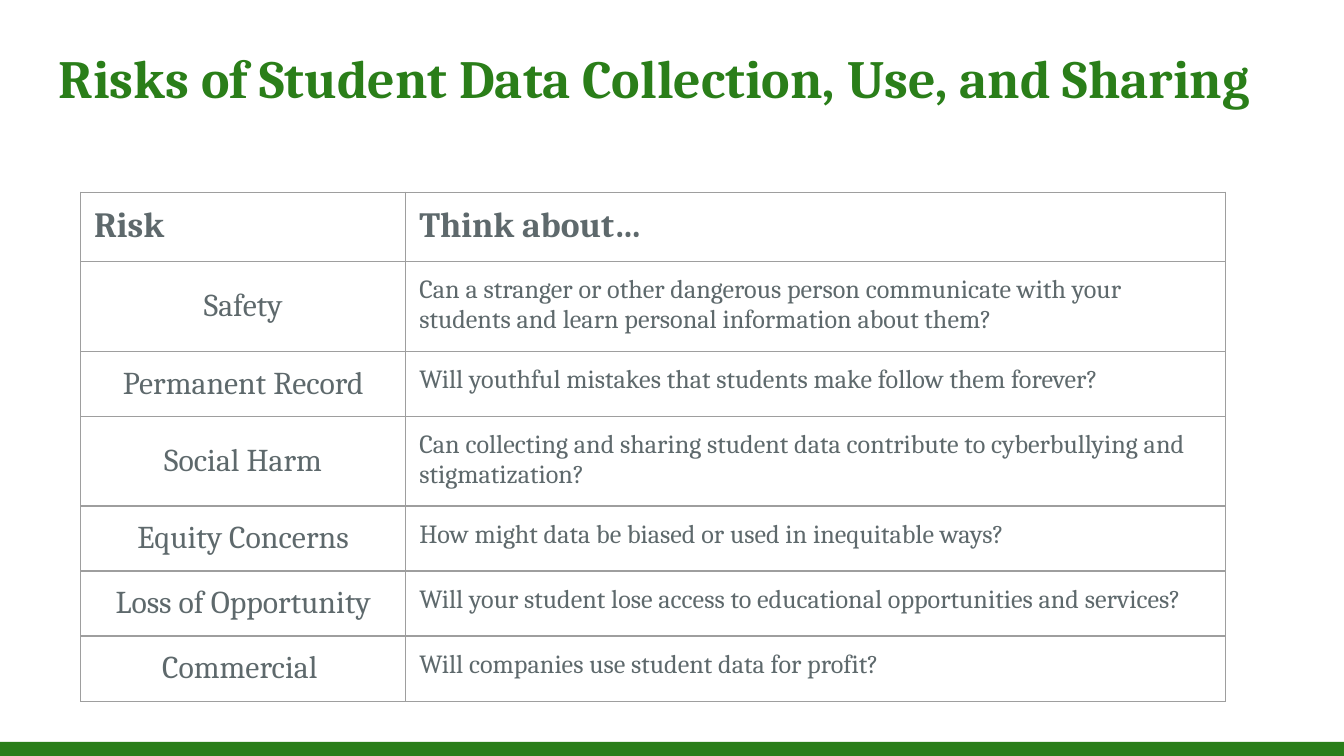
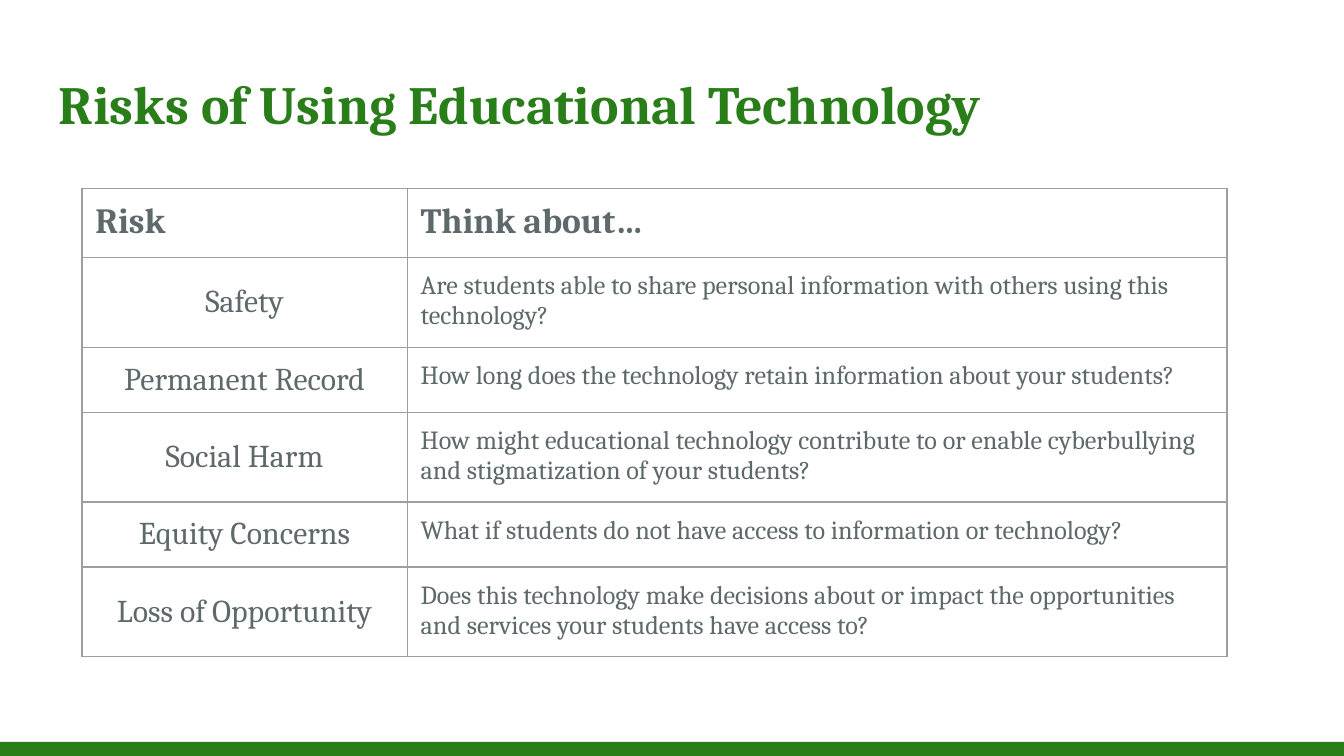
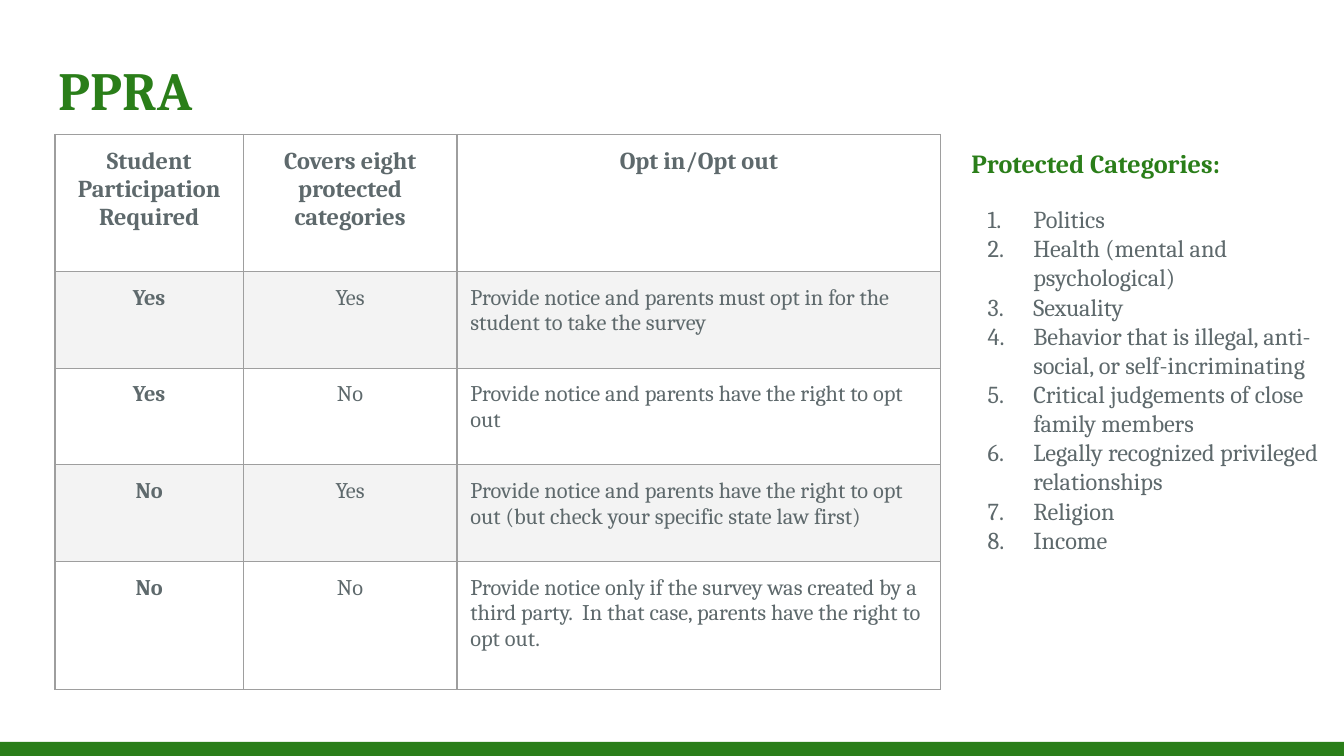
from dataclasses import dataclass

from lxml.etree import SubElement as Sub
from pptx import Presentation
from pptx.dml.color import RGBColor as Rgb
from pptx.enum.shapes import MSO_SHAPE as Shape
from pptx.enum.text import MSO_ANCHOR as Anchor, PP_ALIGN as Align
from pptx.oxml.ns import qn
from pptx.util import Inches, Pt


@dataclass(frozen=True)
class Theme:
    font: str = "Cambria"
    green: str = "2A7E19"
    gray: str = "5E696C"
    band: str = "F3F3F3"
    rule: str = "9E9E9E"
    title: float = 28.8
    head: float = 19
    name: float = 17
    body: float = 14
    list: float = 13
    small: float = 12
    pad: float = 0.1
    edge: float = 0.75


class Deck:
    def __init__(self, theme):
        self.theme = theme
        self.prs = Presentation()
        self.prs.slide_width = Inches(10)
        self.prs.slide_height = Inches(10) * 9 // 16
        self.slide = None

    def page(self, title, top):
        self.slide = self.prs.slides.add_slide(self.prs.slide_layouts[6])
        bar = self.slide.shapes.add_shape(
            Shape.RECTANGLE, Inches(0), Inches(5.52), Inches(10), Inches(0.11))
        bar.shadow.inherit = False
        bar.fill.solid()
        bar.fill.fore_color.rgb = Rgb.from_string(self.theme.green)
        bar.line.fill.background()
        self.text([title], (0.34, top, 9.32, 0.68), self.theme.title,
                  self.theme.green, True)

    def style(self, para, size, color, bold=False, align=Align.LEFT):
        para.alignment = align
        font = para.font
        font.name, font.size, font.bold = self.theme.font, Pt(size), bold
        font.color.rgb = Rgb.from_string(color)

    def inset(self, item):
        item.margin_left = item.margin_right = Inches(self.theme.pad)
        item.margin_top = item.margin_bottom = Inches(self.theme.pad)

    def text(self, lines, box, size, color, bold=False):
        frame = self.slide.shapes.add_textbox(*map(Inches, box)).text_frame
        frame.word_wrap = True
        self.inset(frame)
        frame.text = "\n".join(lines)
        for para in frame.paragraphs:
            self.style(para, size, color, bold)
        return frame

    def steps(self, lines, box):
        frame = self.text(lines, box, self.theme.list, self.theme.gray)
        for para in frame.paragraphs:
            props = para._p.get_or_add_pPr()
            props.set("marL", str(Inches(0.5)))
            props.set("indent", str(Inches(-0.34)))
            Sub(props, qn("a:buAutoNum"), type="arabicPeriod")

    def table(self, box, cols, rows, data):
        frame = self.slide.shapes.add_table(
            len(rows), len(cols), *map(Inches, box))
        grid = frame.table
        grid.first_row = grid.horz_banding = False
        for col, width in zip(grid.columns, cols):
            col.width = Inches(width)
        for row, height, texts in zip(grid.rows, rows, data):
            row.height = Inches(height)
            for cell, text in zip(row.cells, texts):
                cell.text = text
                self.inset(cell)
                self.edges(cell)
                cell.fill.background()
        frame.height = Inches(box[3])
        return grid

    def edges(self, cell):
        props = cell._tc.get_or_add_tcPr()
        for side in ("lnL", "lnR", "lnT", "lnB"):
            line = Sub(props, qn(f"a:{side}"), w=str(Pt(self.theme.edge)))
            fill = Sub(line, qn("a:solidFill"))
            Sub(fill, qn("a:srgbClr"), val=self.theme.rule)

    def risks(self, box, data):
        look = self.theme
        data = [("Risk", "Think about…"), *data]
        grid = self.table(box, (2.42, 6.1), [0.42] * len(data), data)
        for i, row in enumerate(grid.rows):
            name, ask = row.cells
            if i == 0:
                for cell in (name, ask):
                    self.style(cell.text_frame.paragraphs[0], look.head, look.gray, True)
                continue
            name.vertical_anchor = Anchor.MIDDLE
            self.style(name.text_frame.paragraphs[0], look.name, look.gray,
                       align=Align.CENTER)
            self.style(ask.text_frame.paragraphs[0], look.body, look.gray)

    def rights(self, box, data):
        look = self.theme
        grid = self.table(box, (1.4, 1.59, 3.6),
                          (1.02, 0.72, 0.72, 0.72, 0.95), data)
        for i, row in enumerate(grid.rows):
            for j, cell in enumerate(row.cells):
                head = i == 0
                self.style(cell.text_frame.paragraphs[0],
                           look.list if head else look.small, look.gray,
                           head or j == 0,
                           Align.CENTER if head or j < 2 else Align.LEFT)
                if i % 2:
                    cell.fill.solid()
                    cell.fill.fore_color.rgb = Rgb.from_string(look.band)


def main():
    look = Theme()
    deck = Deck(look)

    deck.page("Risks of Student Data Collection, Use, and Sharing", 0.23)
    deck.risks((0.6, 1.43, 8.52, 3.97), [
        ("Safety", "Can a stranger or other dangerous person communicate with your "
                   "students and learn personal information about them?"),
        ("Permanent Record",
         "Will youthful mistakes that students make follow them forever?"),
        ("Social Harm", "Can collecting and sharing student data contribute to "
                        "cyberbullying and stigmatization?"),
        ("Equity Concerns", "How might data be biased or used in inequitable ways?"),
        ("Loss of Opportunity", "Will your student lose access to educational "
                                "opportunities and services?"),
        ("Commercial ", "Will companies use student data for profit?"),
    ])

    deck.page("Risks of Using Educational Technology", 0.43)
    deck.risks((0.61, 1.4, 8.52, 3.67), [
        ("Safety", "Are students able to share personal information with others "
                   "using this technology?"),
        ("Permanent Record",
         "How long does the technology retain information about your students?"),
        ("Social Harm", "How might educational technology contribute to or enable "
                        "cyberbullying and stigmatization of your students?"),
        ("Equity Concerns",
         "What if students do not have access to information or technology?"),
        ("Loss of Opportunity", "Does this technology make decisions about or impact "
                                "the opportunities and services your students have "
                                "access to?"),
    ])

    deck.page("PPRA", 0.32)
    deck.rights((0.41, 1, 6.58, 4.22), [
        ("Student Participation Required", "Covers eight protected categories",
         "Opt in/Opt out"),
        ("Yes", "Yes", "Provide notice and parents must opt in for the student to "
                       "take the survey"),
        ("Yes", "No", "Provide notice and parents have the right to opt out"),
        ("No", "Yes", "Provide notice and parents have the right to opt out "
                      "(but check your specific state law first)"),
        ("No", "No", "Provide notice only if the survey was created by a third "
                     "party.  In that case, parents have the right to opt out."),
    ])
    deck.steps([
        "Politics",
        "Health (mental and psychological)",
        "Sexuality",
        "Behavior that is illegal, anti-social, or self-incriminating",
        "Critical judgements of close family members",
        "Legally recognized privileged relationships",
        "Religion",
        "Income",
    ], (7.09, 1.42, 2.88, 3.05))
    deck.text(["Protected Categories:"], (7.13, 1, 2.79, 0.44), look.body,
              look.green, True)

    deck.prs.save("out.pptx")


if __name__ == "__main__":
    main()
